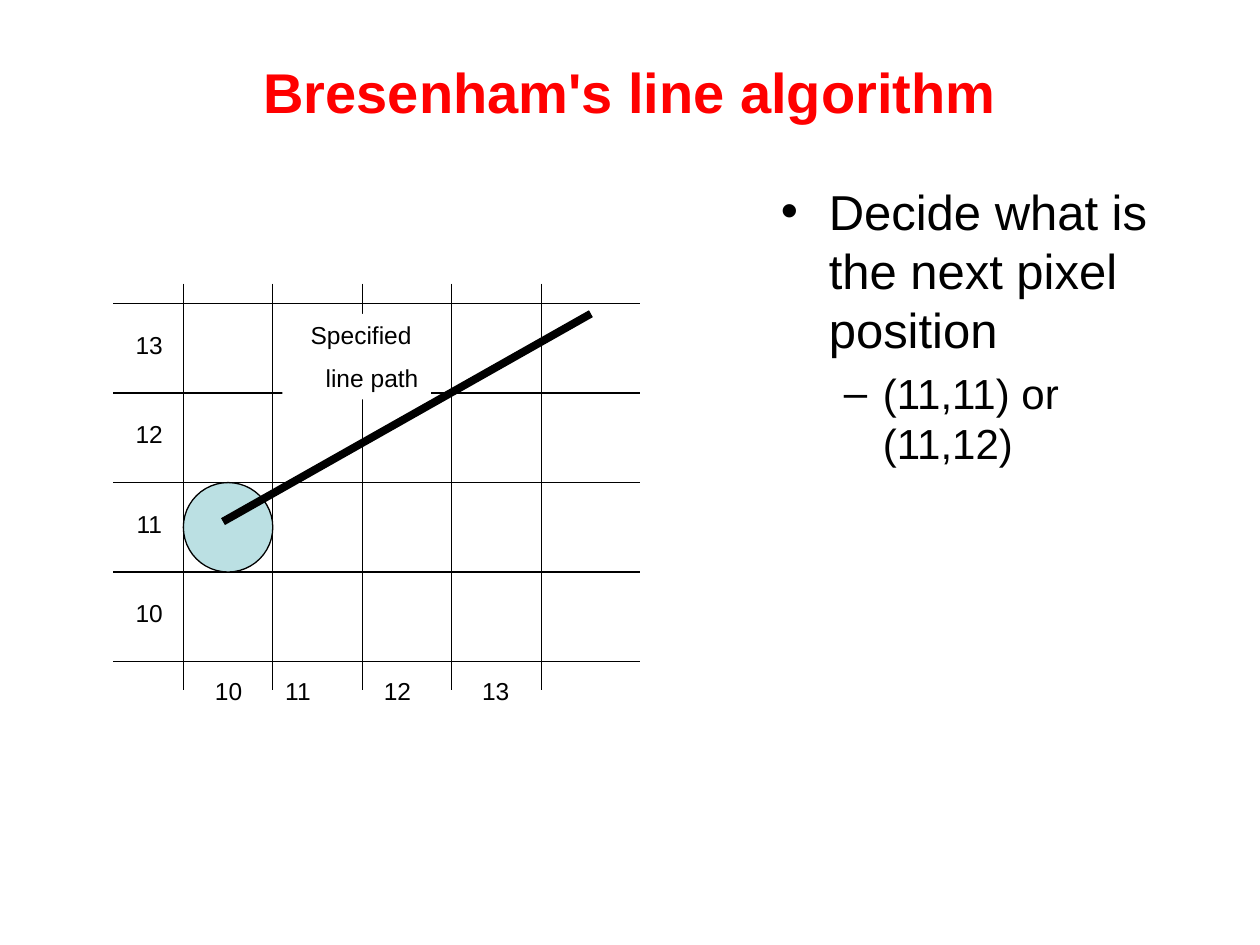
from lxml.etree import SubElement
from pptx import Presentation
from pptx.dml.color import RGBColor
from pptx.enum.shapes import MSO_CONNECTOR, MSO_SHAPE
from pptx.enum.text import MSO_ANCHOR, PP_ALIGN
from pptx.oxml.ns import qn
from pptx.util import Inches, Pt

TITLE = "Bresenham's line algorithm"
# text, size, bullet, left margin, hanging indent, space before
POINTS = [
    ("Decide what is the next pixel position", 28, "•", 0.38, 0.38, 0),
    ("(11,11) or (11,12)", 24, "–", 0.81, 0.31, 5.5),
]
PATH_LABEL = ["Specified ", "line path"]
COLUMN_LABELS = {"10": 1.46, "11": 2.01, "12": 2.8, "13": 3.58}
ROW_LABELS = ["13", "12", "11", "10"]

COLORS = {"title": "FF0000", "ink": "000000", "paper": "FFFFFF", "pixel": "BBE0E3"}
FONT = "Arial"
CELL = 0.71
CELLS = 4
GRID_LEFT, GRID_TOP = 1.455, 2.41
ROW_LINE_ENDS = (0.9, 5.08)
COLUMN_LINE_ENDS = (2.25, 5.48)
LABEL_SIZE = 14
LABEL_HEIGHT = 0.33


def color(name):
    return RGBColor.from_string(COLORS[name])


def inches(*lengths):
    return [Inches(length) for length in lengths]


def write(paragraph, text, size, ink="ink", **formats):
    """Set a paragraph's text and font; formats are paragraph attributes."""
    run = paragraph.add_run()
    run.text = text
    run.font.name, run.font.size = FONT, Pt(size)
    run.font.color.rgb = color(ink)
    for name, value in formats.items():
        setattr(paragraph, name, value)
    return run


def add_line(slide, x1, y1, x2, y2, width=0.75):
    line = slide.shapes.add_connector(MSO_CONNECTOR.STRAIGHT, *inches(x1, y1, x2, y2))
    line.line.color.rgb = color("ink")
    line.line.width = Pt(width)
    SubElement(line._element.spPr, qn("a:effectLst"))


def add_shape(slide, preset, fill, *box):
    shape = slide.shapes.add_shape(preset, *inches(*box))
    shape.shadow.inherit = False
    shape.fill.solid()
    shape.fill.fore_color.rgb = color(fill)
    return shape


def add_label(slide, text, left, top):
    label = slide.shapes.add_textbox(*inches(left, top, CELL, LABEL_HEIGHT))
    label.text_frame.word_wrap = True
    write(label.text_frame.paragraphs[0], text, LABEL_SIZE, alignment=PP_ALIGN.CENTER)


def add_paragraph(frame, index):
    return frame.add_paragraph() if index else frame.paragraphs[0]


def add_title(slide):
    title = slide.shapes.title
    title.left, title.top, title.width, title.height = inches(0.5, 0.3, 9, 0.85)
    title.text_frame.vertical_anchor = MSO_ANCHOR.MIDDLE
    run = write(title.text_frame.paragraphs[0], TITLE, 32, "title",
                alignment=PP_ALIGN.CENTER)
    run.font.bold = True


def add_points(slide):
    frame = slide.shapes.add_textbox(*inches(6.1, 1.39, 3.4, 5.31)).text_frame
    frame.word_wrap = True
    for index, (text, size, bullet, margin, hanging, before) in enumerate(POINTS):
        paragraph = add_paragraph(frame, index)
        write(paragraph, text, size, space_before=Pt(before), level=index)
        properties = paragraph._p.get_or_add_pPr()
        properties.set("marL", str(Inches(margin)))
        properties.set("indent", str(-Inches(hanging)))
        SubElement(properties, qn("a:buFont"), typeface=FONT)
        SubElement(properties, qn("a:buChar"), char=bullet)


def add_grid(slide):
    for step in range(CELLS + 1):
        x, y = GRID_LEFT + step * CELL, GRID_TOP + step * CELL
        add_line(slide, ROW_LINE_ENDS[0], y, ROW_LINE_ENDS[1], y)
        add_line(slide, x, COLUMN_LINE_ENDS[0], x, COLUMN_LINE_ENDS[1])


def add_line_path(slide):
    pixel = add_shape(slide, MSO_SHAPE.OVAL, "pixel",
                      GRID_LEFT, GRID_TOP + 2 * CELL, CELL, CELL)
    pixel.line.color.rgb = color("ink")
    pixel.line.width = Pt(0.75)
    add_line(slide, 1.77, 4.14, 4.69, 2.49, width=4.5)

    label = add_shape(slide, MSO_SHAPE.RECTANGLE, "paper", 2.24, 2.49, 1.18, 0.68)
    label.line.fill.background()
    frame = label.text_frame
    frame.word_wrap = True
    frame.vertical_anchor = MSO_ANCHOR.TOP
    for index, text in enumerate(PATH_LABEL):
        write(add_paragraph(frame, index), text, LABEL_SIZE,
              alignment=PP_ALIGN.RIGHT, space_before=Pt(8 * index))


def add_axis_labels(slide):
    for text, left in COLUMN_LABELS.items():
        add_label(slide, text, left, 5.32)
    for row, text in enumerate(ROW_LABELS):
        add_label(slide, text, 0.83, 2.57 + row * CELL)


def main():
    presentation = Presentation()
    presentation.slide_width, presentation.slide_height = inches(10, 7.5)
    slide = presentation.slides.add_slide(presentation.slide_layouts[5])
    for add_part in (add_title, add_points, add_grid, add_line_path, add_axis_labels):
        add_part(slide)
    presentation.save("out.pptx")


if __name__ == "__main__":
    main()
